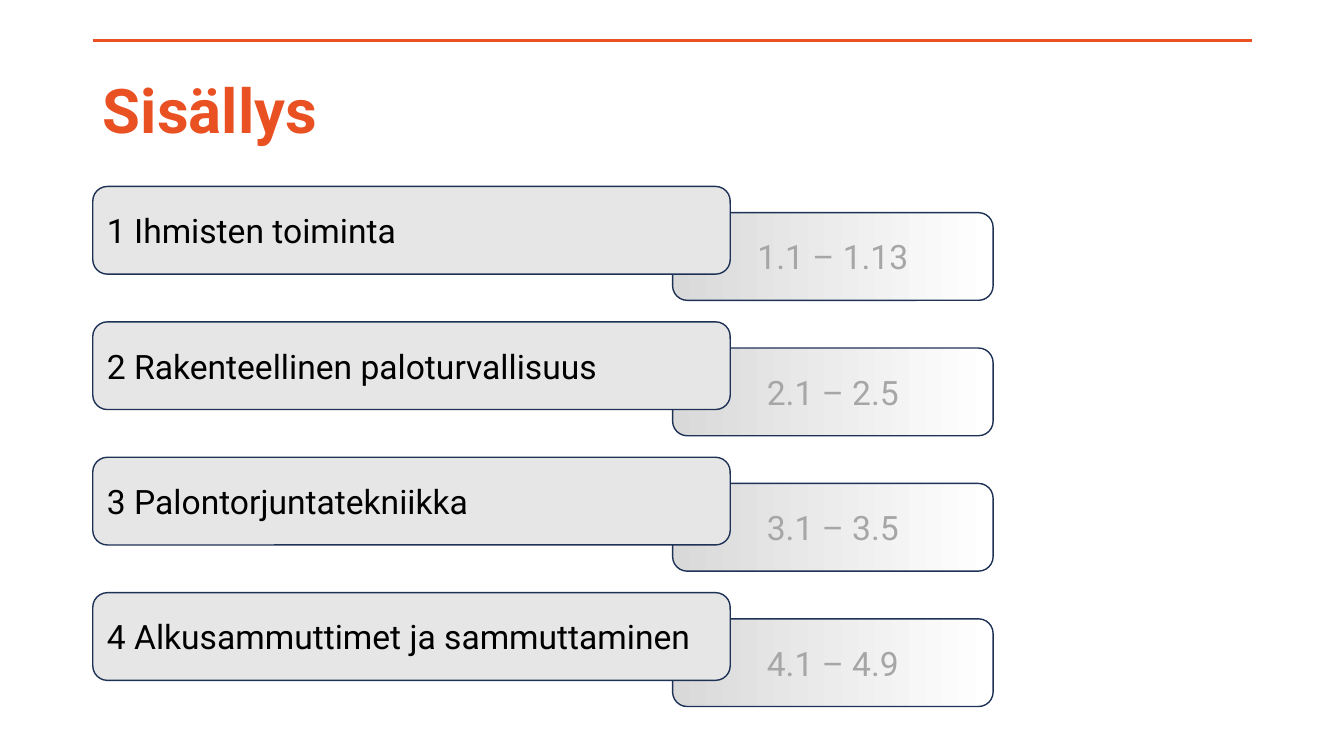
from lxml.etree import SubElement
from pptx import Presentation
from pptx.dml.color import RGBColor
from pptx.enum.shapes import MSO_CONNECTOR, MSO_SHAPE
from pptx.enum.text import MSO_ANCHOR, MSO_AUTO_SIZE, PP_ALIGN
from pptx.oxml.ns import qn
from pptx.util import Inches, Pt

ORANGE = RGBColor(0xE9, 0x51, 0x23)
NAVY = RGBColor(0x1E, 0x32, 0x56)
PALE_GRAY = RGBColor(0xE7, 0xE6, 0xE6)
LIGHT_GRAY = RGBColor(0xD9, 0xD9, 0xD9)
MID_GRAY = RGBColor(0xA6, 0xA6, 0xA6)
WHITE = RGBColor(0xFF, 0xFF, 0xFF)
BLACK = RGBColor(0, 0, 0)

FONT = "Roboto"
CHAPTERS = [
    ("1 Ihmisten toiminta", "1.1 – 1.13"),
    ("2 Rakenteellinen paloturvallisuus", "2.1 – 2.5"),
    ("3 Palontorjuntatekniikka", "3.1 – 3.5"),
    ("4 Alkusammuttimet ja sammuttaminen", "4.1 – 4.9"),
]


def write_text(shape, text, size=24, color=BLACK, bold=False,
               align=PP_ALIGN.LEFT, line_spacing=1.0):
    frame = shape.text_frame
    frame.word_wrap = True
    frame.auto_size = MSO_AUTO_SIZE.NONE
    frame.vertical_anchor = MSO_ANCHOR.MIDDLE
    para = frame.paragraphs[0]
    para.alignment = align
    para.line_spacing = line_spacing
    span = para.add_run()
    span.text = text
    span.font.name = FONT
    span.font.size = Pt(size)
    span.font.bold = bold
    span.font.color.rgb = color


def add_heading(page, text, left, top, width, height):
    rule = page.shapes.add_connector(
        MSO_CONNECTOR.STRAIGHT, Inches(left), Inches(top),
        Inches(left + width), Inches(top))
    rule.line.color.rgb = ORANGE
    rule.line.width = Pt(2.5)
    SubElement(rule._element.spPr, qn("a:effectLst"))

    title = page.shapes.title
    title.left, title.top = Inches(left), Inches(top)
    title.width, title.height = Inches(width), Inches(height)
    write_text(title, text, size=44, color=ORANGE, bold=True, line_spacing=0.9)


def add_card(page, left, top, width, height):
    card = page.shapes.add_shape(
        MSO_SHAPE.ROUNDED_RECTANGLE, Inches(left), Inches(top),
        Inches(width), Inches(height))
    card.shadow.inherit = False
    card.line.color.rgb = NAVY
    card.line.width = Pt(1)
    return card


def add_chapter(page, name, sections, left, top, width, height):
    card_height = height * 0.77
    section_card = add_card(page, left + width * 0.644, top + height - card_height,
                            width * 0.356, card_height)
    section_card.fill.gradient()
    section_card.fill.gradient_angle = 0
    for stop, color in zip(section_card.fill.gradient_stops, (LIGHT_GRAY, WHITE)):
        stop.color.rgb = color
    write_text(section_card, sections, color=MID_GRAY, align=PP_ALIGN.CENTER)

    name_card = add_card(page, left, top, width * 0.708, card_height)
    name_card.fill.solid()
    name_card.fill.fore_color.rgb = PALE_GRAY
    write_text(name_card, name)


def add_contents(page, chapters, left, top, width, height):
    row_height = 1.13
    pitch = (height - row_height) / (len(chapters) - 1)
    for row, (name, sections) in enumerate(chapters):
        add_chapter(page, name, sections, left, top + row * pitch, width, row_height)


def main():
    deck = Presentation()
    deck.slide_width, deck.slide_height = Inches(13.33), Inches(7.5)
    page = deck.slides.add_slide(deck.slide_layouts[5])
    add_heading(page, "Sisällys", 0.92, 0.4, 11.5, 1.45)
    add_contents(page, CHAPTERS, 0.92, 1.85, 8.93, 5.16)
    deck.save("out.pptx")


if __name__ == "__main__":
    main()
